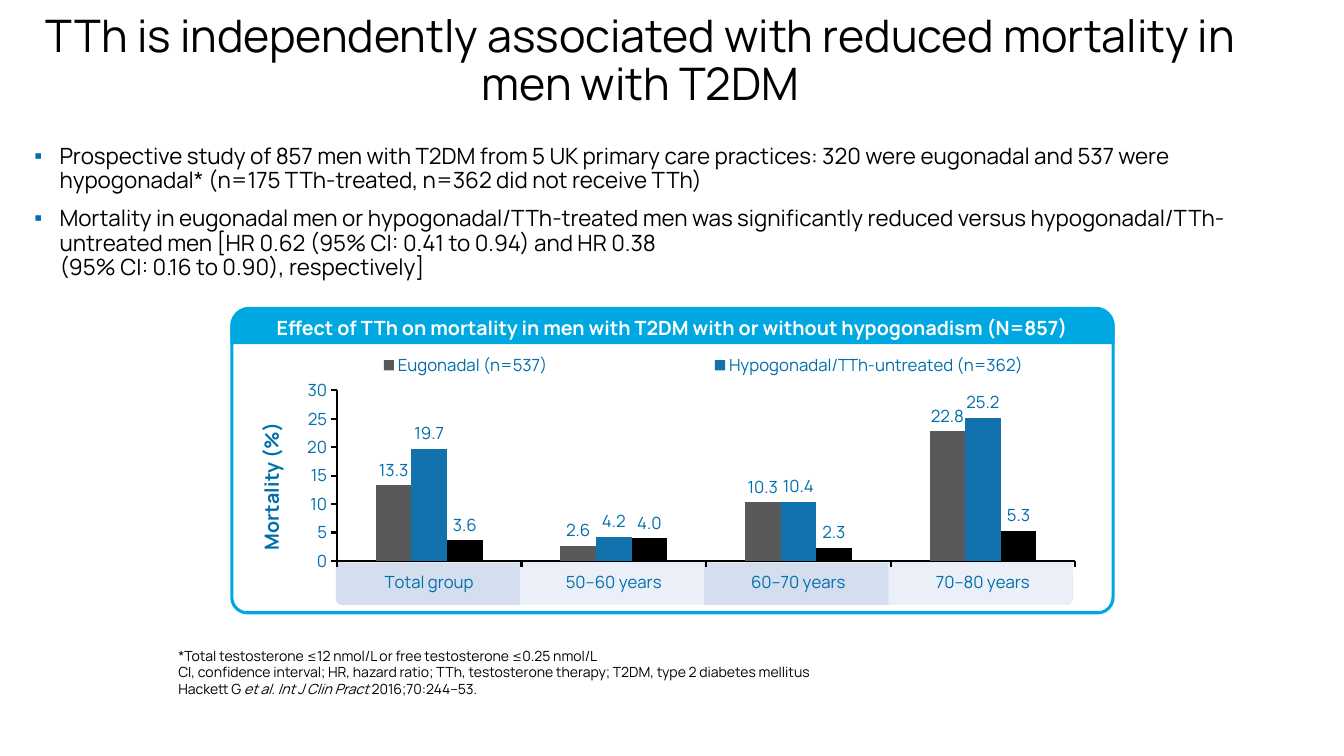
"""Build the slide on testosterone therapy and mortality in men with T2DM."""
import pptx
import pptx.chart.data
import pptx.dml.color
import pptx.enum.chart
import pptx.enum.shapes
import pptx.enum.text
import pptx.oxml
import pptx.oxml.ns
import pptx.util
from pptx.util import Inches

RGBColor = pptx.dml.color.RGBColor
Pt = pptx.util.Pt
Shape = pptx.enum.shapes.MSO_SHAPE
Anchor = pptx.enum.text.MSO_ANCHOR
Align = pptx.enum.text.PP_ALIGN
qn = pptx.oxml.ns.qn

FONT = "Manrope"
BLACK = RGBColor(0x00, 0x00, 0x00)
WHITE = RGBColor(0xFF, 0xFF, 0xFF)
BLUE = RGBColor(0x00, 0x6E, 0xAB)
CYAN = RGBColor(0x00, 0xA8, 0xE1)
BAND_DARK = RGBColor(0xD5, 0xDE, 0xEF)
BAND_LIGHT = RGBColor(0xEB, 0xEF, 0xF7)
GREY_BAR = RGBColor(0x58, 0x59, 0x5B)
BLUE_BAR = RGBColor(0x12, 0x72, 0xAE)

TITLE = "TTh is independently associated with reduced mortality in men with T2DM"
BULLETS = [
    "Prospective study of 857 men with T2DM from 5 UK primary care practices: "
    "320 were eugonadal and 537 were hypogonadal* "
    "(n=175 TTh-treated, n=362 did not receive TTh)",
    "Mortality in eugonadal men or hypogonadal/TTh-treated men was significantly "
    "reduced versus hypogonadal/TTh-untreated men "
    "[HR 0.62 (95% CI: 0.41 to 0.94) and HR 0.38 \n"
    "(95% CI: 0.16 to 0.90), respectively]",
]
PANEL_HEADING = "Effect of TTh on mortality in men with T2DM with or without hypogonadism (N=857)"
AXIS_TITLE = "Mortality (%)"
AGE_GROUPS = ["Total group", "50–60 years", "60–70 years", "70–80 years"]
SERIES = [
    ("Eugonadal (n=537)", [13.3, 2.6, 10.3, 22.8], GREY_BAR),
    ("Hypogonadal/TTh-untreated (n=362)", [19.7, 4.2, 10.4, 25.2], BLUE_BAR),
    ("Hypogonadal/TTh-treated (n=175)", [3.6, 4.0, 2.3, 5.3], BLACK),
]
FOOTNOTES = [
    ["*Total testosterone ≤12 nmol/L or free testosterone ≤0.25 nmol/L"],
    ["CI, confidence interval; HR, hazard ratio; TTh, testosterone therapy; "
     "T2DM, type 2 diabetes mellitus"],
    ["Hackett G ", ("et al. Int J Clin Pract",), " 2016;70:244–53."],
]

PANEL_LEFT, PANEL_WIDTH = 2.3, 8.74
BAND_LEFT, BAND_TOP, BAND_WIDTH, BAND_HEIGHT = 3.33, 5.58, 7.31, 0.42


def style_font(font, size, color=BLUE, bold=False):
    """Set typeface, size, colour and weight."""
    font.name = FONT
    font.size = Pt(size)
    font.color.rgb = color
    font.bold = bold


def write(frame, paragraphs, size, color=BLACK, bold=False, align=Align.LEFT,
          anchor=Anchor.TOP, line_spacing=None, space_before=0, bullet=None):
    """Fill a text frame; each paragraph is a list of parts, tuples being italic."""
    frame.word_wrap = True
    frame.vertical_anchor = anchor
    for index, parts in enumerate(paragraphs):
        paragraph = frame.add_paragraph() if index else frame.paragraphs[0]
        paragraph.alignment = align
        paragraph.line_spacing = line_spacing
        paragraph.space_before = Pt(space_before if index else 0)
        if bullet:
            add_bullet(paragraph, bullet)
        for part in parts:
            italic = isinstance(part, tuple)
            for number, line in enumerate((part[0] if italic else part).split("\n")):
                if number:
                    paragraph.add_line_break()
                run = paragraph.add_run()
                run.text = line
                style_font(run.font, size, color, bold)
                run.font.italic = italic


def add_bullet(paragraph, character):
    """Give a paragraph a coloured bullet with a hanging indent."""
    properties = paragraph._p.get_or_add_pPr()
    properties.set("marL", str(Inches(0.25)))
    properties.set("indent", str(-Inches(0.25)))
    bullet_color = pptx.oxml.parse_xml(
        f'<a:buClr {pptx.oxml.ns.nsdecls("a")}><a:srgbClr val="{BLUE}"/></a:buClr>')
    bullet_mark = pptx.oxml.parse_xml(
        f'<a:buChar {pptx.oxml.ns.nsdecls("a")} char="{character}"/>')
    properties.extend([bullet_color, bullet_mark])


def place(shape, left, top, width, height):
    """Move and size a shape, in inches."""
    shape.left, shape.top = Inches(left), Inches(top)
    shape.width, shape.height = Inches(width), Inches(height)


def add_box(slide, kind, box, adjustments, fill=None, line=None):
    """Add a preset shape with an optional fill and outline."""
    shape = slide.shapes.add_shape(kind, *map(Inches, box))
    shape.shadow.inherit = False
    for index, value in enumerate(adjustments):
        shape.adjustments[index] = value
    if fill is None:
        shape.fill.background()
    else:
        shape.fill.solid()
        shape.fill.fore_color.rgb = fill
    if line is None:
        shape.line.fill.background()
    else:
        shape.line.color.rgb = line
        shape.line.width = Pt(2.25)
    return shape


def set_layout(element, position, box, inner=False):
    """Give a chart part a manual layout in fractions of the chart."""
    for previous in element.findall(qn("c:layout")):
        element.remove(previous)
    target = '<c:layoutTarget val="inner"/>' if inner else ""
    modes = "".join(f'<c:{axis}Mode val="edge"/>' for axis in "xy")
    values = "".join(f'<c:{name} val="{value}"/>' for name, value in zip("xywh", box))
    element.insert(position, pptx.oxml.parse_xml(
        f'<c:layout {pptx.oxml.ns.nsdecls("c")}><c:manualLayout>'
        f'{target}{modes}{values}</c:manualLayout></c:layout>'))


def add_bands(slide):
    """Add the shaded bands behind the age-group labels."""
    step = BAND_WIDTH / len(AGE_GROUPS)
    base = add_box(slide, Shape.ROUND_2_SAME_RECTANGLE,
                   (BAND_LEFT, BAND_TOP, BAND_WIDTH, BAND_HEIGHT), [0.137, 0], BAND_DARK)
    base.rotation = 180
    for column, kind, adjustments in ((1, Shape.ROUND_2_SAME_RECTANGLE, [0, 0]),
                                      (3, Shape.ROUND_1_RECTANGLE, [0.151])):
        band = add_box(slide, kind, (BAND_LEFT + column * step, BAND_TOP, step, BAND_HEIGHT),
                       adjustments, BAND_LIGHT)
        band._element.spPr.xfrm.set("flipV", "1")


def add_mortality_chart(slide):
    """Add the clustered column chart."""
    data = pptx.chart.data.CategoryChartData()
    data.categories = AGE_GROUPS
    for name, values, _ in SERIES:
        data.add_series(name, values)
    chart = slide.shapes.add_chart(
        pptx.enum.chart.XL_CHART_TYPE.COLUMN_CLUSTERED,
        *map(Inches, (2.5, 3.16, 8.34, 3.2)), data).chart
    style_font(chart.font, 10)
    chart.has_title = False
    chart.has_legend = True
    chart.legend.position = pptx.enum.chart.XL_LEGEND_POSITION.BOTTOM
    chart.legend.include_in_layout = False
    style_font(chart.legend.font, 12)
    set_layout(chart.legend._element, 1, (0.107, 0.1, 0.86, 0.09))
    plot = chart.plots[0]
    plot.gap_width = 219
    plot.overlap = 0
    plot.vary_by_categories = False
    for series, (_, _, color) in zip(plot.series, SERIES):
        series.format.fill.solid()
        series.format.fill.fore_color.rgb = color
        labels = series.data_labels
        labels.show_value = True
        labels.position = pptx.enum.chart.XL_LABEL_POSITION.OUTSIDE_END
        labels.number_format = "0.0"
        labels.number_format_is_linked = False
        style_font(labels.font, 12)
    for axis in (chart.category_axis, chart.value_axis):
        axis.has_major_gridlines = False
        axis.major_tick_mark = pptx.enum.chart.XL_TICK_MARK.OUTSIDE
        axis.format.line.color.rgb = BLACK
        axis.format.line.width = Pt(1.5)
        style_font(axis.tick_labels.font, 12)
    chart.value_axis.minimum_scale = 0
    chart.value_axis.maximum_scale = 30
    chart.value_axis.major_unit = 5
    write(chart.value_axis.axis_title.text_frame, [[AXIS_TITLE]], 14, BLUE, bold=True)
    plot_area = chart._chartSpace.find(qn("c:chart")).find(qn("c:plotArea"))
    set_layout(plot_area, 0, (0.101, 0.223, 0.878, 0.529), inner=True)


def main():
    """Assemble and save the slide."""
    presentation = pptx.Presentation()
    presentation.slide_width, presentation.slide_height = Inches(13.33), Inches(7.5)
    slide = presentation.slides.add_slide(presentation.slide_layouts[1])
    title, body = slide.placeholders
    place(title, 0.24, 0.16, 12.23, 0.91)
    write(title.text_frame, [[TITLE]], 32, align=Align.CENTER,
          anchor=Anchor.MIDDLE, line_spacing=0.9)
    place(body, 0.24, 1.39, 12.36, 1.58)
    write(body.text_frame, [[text] for text in BULLETS], 16,
          line_spacing=0.9, space_before=10, bullet="▪")
    add_bands(slide)
    add_mortality_chart(slide)
    add_box(slide, Shape.ROUNDED_RECTANGLE, (PANEL_LEFT, 3.08, PANEL_WIDTH, 3), [0.051], line=CYAN)
    heading = add_box(slide, Shape.ROUND_2_SAME_RECTANGLE,
                      (PANEL_LEFT, 3.06, PANEL_WIDTH, 0.34), [0.5, 0], CYAN, CYAN)
    write(heading.text_frame, [[PANEL_HEADING]], 14, WHITE, bold=True,
          align=Align.CENTER, anchor=Anchor.MIDDLE)
    footnote = slide.shapes.add_textbox(*map(Inches, (1.67, 6.36, 10, 0.61)))
    write(footnote.text_frame, FOOTNOTES, 10, anchor=Anchor.BOTTOM)
    presentation.save("out.pptx")


if __name__ == "__main__":
    main()
